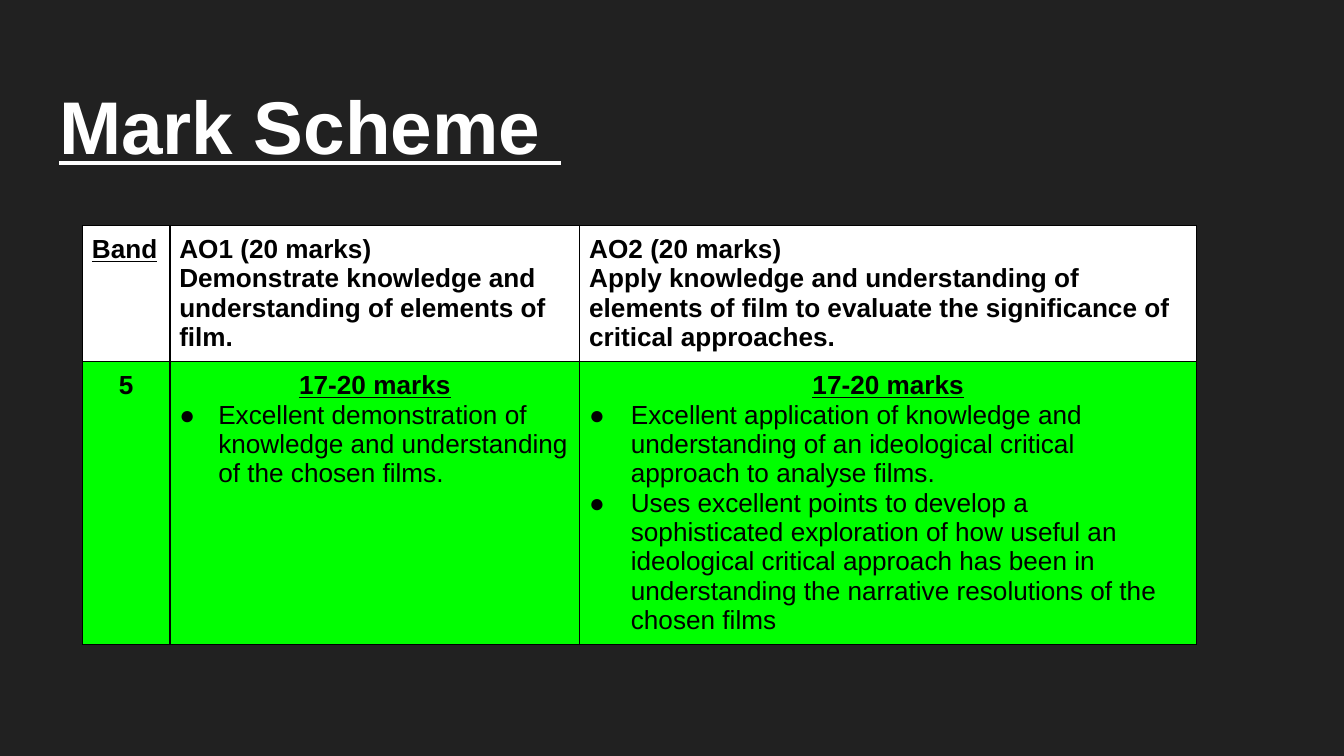
import pptx
import pptx.dml.color
import pptx.enum.text
import pptx.oxml.ns
import pptx.util
from lxml import etree

RGBColor = pptx.dml.color.RGBColor
DARK = RGBColor(0x21, 0x21, 0x21)
WHITE = RGBColor(0xFF, 0xFF, 0xFF)
BLACK = RGBColor(0, 0, 0)
GREEN = RGBColor(0, 0xFF, 0)

WIDTH = 10
HEIGHT = WIDTH * 9 / 16
CELL_INSET = 0.07
HANGING = 0.35
BORDER = 0.75


def add_xml(parent, tag, **attrs):
    return etree.SubElement(parent, pptx.oxml.ns.qn(tag), **attrs)


class Deck:
    font = "Arial"
    title_size = 40
    body_size = 14

    def __init__(self):
        self.prs = pptx.Presentation()
        self.prs.slide_width = pptx.util.Inches(WIDTH)
        self.prs.slide_height = pptx.util.Inches(HEIGHT)
        self.s = self.prs.slides.add_slide(self.prs.slide_layouts[5])
        self.s.background.fill.solid()
        self.s.background.fill.fore_color.rgb = DARK

    def across(self, percent):
        return round(percent * self.prs.slide_width / 100)

    def down(self, percent):
        return round(percent * self.prs.slide_height / 100)

    def style(self, p, size, color, bold=True, underline=False):
        for r in p.runs:
            r.font.name = self.font
            r.font.size = pptx.util.Pt(size)
            r.font.color.rgb = color
            r.font.bold = bold
            r.font.underline = underline

    def title(self, text, x, y, w, h):
        sp = self.s.shapes.title
        sp.left, sp.top = self.across(x), self.down(y)
        sp.width, sp.height = self.across(w), self.down(h)
        tf = sp.text_frame
        tf.text = text
        tf.word_wrap = True
        tf.auto_size = pptx.enum.text.MSO_AUTO_SIZE.NONE
        tf.vertical_anchor = pptx.enum.text.MSO_ANCHOR.MIDDLE
        tf.margin_left = tf.margin_right = pptx.util.Inches(0.1)
        tf.margin_top = tf.margin_bottom = pptx.util.Inches(0.1)
        tf.paragraphs[0].alignment = pptx.enum.text.PP_ALIGN.LEFT
        self.style(tf.paragraphs[0], self.title_size, WHITE, underline=True)

    def table(self, x, y, cols, rows):
        table = self.s.shapes.add_table(
            len(rows), len(cols), self.across(x), self.down(y),
            self.across(sum(cols)), self.down(sum(rows))).table
        for col, percent in zip(table.columns, cols):
            col.width = self.across(percent)
        for row, percent in zip(table.rows, rows):
            row.height = self.down(percent)
        return table

    def cell(self, cell, color, lines, heading=None, bullet_indent=None):
        """Fill a cell; a heading is centred and underlined above the lines."""
        tf = cell.text_frame
        tf.text = "\n".join(([heading] if heading else []) + lines)
        cell.margin_left = cell.margin_right = pptx.util.Inches(CELL_INSET)
        cell.margin_top = cell.margin_bottom = pptx.util.Inches(CELL_INSET)
        for i, p in enumerate(tf.paragraphs):
            is_heading = bool(heading) and i == 0
            bulleted = bullet_indent is not None and not is_heading
            self.style(p, self.body_size, BLACK, not bulleted, is_heading)
            if is_heading:
                p.alignment = pptx.enum.text.PP_ALIGN.CENTER
            if bulleted:
                self.bullet(p, bullet_indent)
        # Borders come before the fill in the cell's properties
        for side in ("a:lnL", "a:lnR", "a:lnT", "a:lnB"):
            ln = add_xml(cell._tc.get_or_add_tcPr(), side, w=str(pptx.util.Pt(BORDER)))
            add_xml(add_xml(ln, "a:solidFill"), "a:srgbClr", val=str(BLACK))
        cell.fill.solid()
        cell.fill.fore_color.rgb = color

    def bullet(self, p, indent):
        pPr = p._p.get_or_add_pPr()
        pPr.set("marL", str(pptx.util.Inches(indent)))
        pPr.set("indent", str(-pptx.util.Inches(HANGING)))
        add_xml(add_xml(pPr, "a:buClr"), "a:srgbClr", val=str(BLACK))
        add_xml(pPr, "a:buFont", typeface=self.font)
        add_xml(pPr, "a:buChar", char="●")


def main():
    deck = Deck()
    deck.title("Mark Scheme ", 3.4, 8.5, 93.2, 16)

    # Table grid, in percent of the slide
    table = deck.table(6.14, 29.8, cols=(6.5, 30.5, 45.9), rows=(16.2, 33.4))

    # Assessment objectives
    deck.cell(table.cell(0, 0), WHITE, [], heading="Band")
    table.cell(0, 0).text_frame.paragraphs[0].alignment = pptx.enum.text.PP_ALIGN.LEFT
    deck.cell(table.cell(0, 1), WHITE, [
        "AO1 (20 marks)",
        "Demonstrate knowledge and",
        "understanding of elements of film."])
    deck.cell(table.cell(0, 2), WHITE, [
        "AO2 (20 marks)",
        "Apply knowledge and understanding of elements of film to evaluate "
        "the significance of critical approaches."])

    # Top band
    deck.cell(table.cell(1, 0), GREEN, ["5"])
    table.cell(1, 0).text_frame.paragraphs[0].alignment = pptx.enum.text.PP_ALIGN.CENTER
    deck.cell(table.cell(1, 1), GREEN, [
        "Excellent demonstration of knowledge and understanding of the chosen films."],
        heading="17-20 marks", bullet_indent=0.29)
    deck.cell(table.cell(1, 2), GREEN, [
        "Excellent application of knowledge and understanding of an ideological "
        "critical approach to analyse films.",
        "Uses excellent points to develop a sophisticated exploration of how useful "
        "an ideological critical approach has been in understanding the narrative "
        "resolutions of the chosen films"],
        heading="17-20 marks", bullet_indent=0.31)

    deck.prs.save("out.pptx")


if __name__ == "__main__":
    main()
